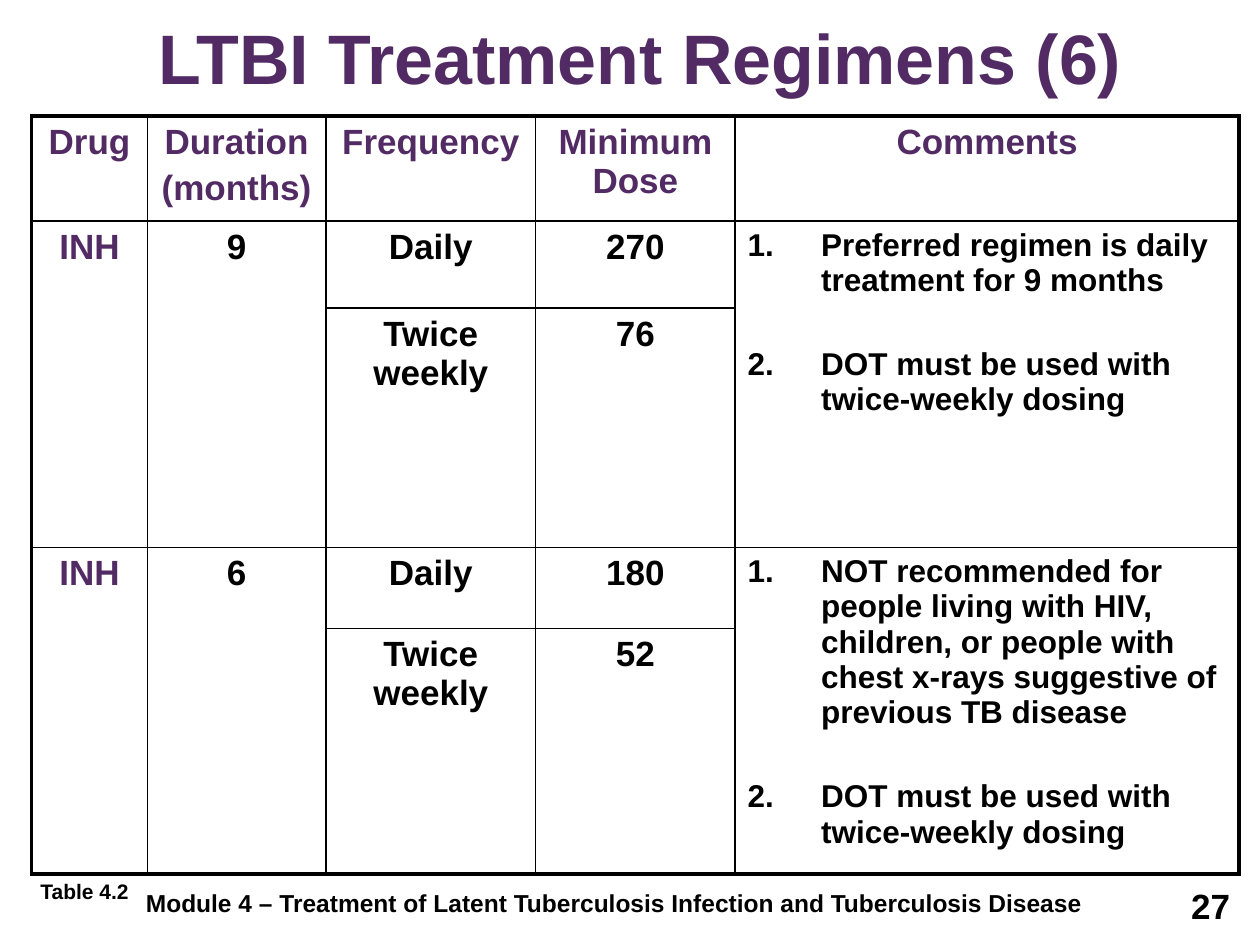
"""Build the slide with the table of LTBI treatment regimens."""
from dataclasses import dataclass

from lxml import etree
from pptx import Presentation
from pptx.dml.color import RGBColor
from pptx.enum.text import MSO_ANCHOR, PP_ALIGN
from pptx.oxml.ns import qn
from pptx.util import Cm, Pt

LEFT, CENTER, RIGHT = PP_ALIGN.LEFT, PP_ALIGN.CENTER, PP_ALIGN.RIGHT
TOP, BOTTOM = MSO_ANCHOR.TOP, MSO_ANCHOR.BOTTOM


@dataclass(frozen=True)
class Theme:
    font: str = "Arial"
    accent: RGBColor = RGBColor(0x53, 0x2B, 0x64)
    ink: RGBColor = RGBColor(0, 0, 0)
    title: int = 40
    cell: int = 20
    comment: int = 18
    footer: int = 14
    label: int = 12
    frame: float = 2.25
    rule: float = 1


THEME = Theme()


def style(para, size, color, align):
    para.alignment = align
    for span in para.runs:
        span.font.name = THEME.font
        span.font.size = Pt(size)
        span.font.bold = True
        span.font.color.rgb = color


def add_border(cell, side, width):
    line = etree.SubElement(cell._tc.get_or_add_tcPr(), qn(f"a:ln{side}"), w=str(Pt(width)))
    fill = etree.SubElement(line, qn("a:solidFill"))
    etree.SubElement(fill, qn("a:srgbClr"), val=str(THEME.ink))


deck = Presentation()
deck.slide_width, deck.slide_height = Cm(25.4), Cm(19.05)
page = deck.slides.add_slide(deck.slide_layouts[6])

texts = [
    ("Module 4 – Treatment of Latent Tuberculosis Infection and Tuberculosis Disease",
     (0, 17.78, 24.77, 0.69), THEME.footer, THEME.ink, CENTER, TOP),
    ("27", (19.13, 17.7, 5.92, 1.32), THEME.cell, THEME.ink, RIGHT, TOP),
    ("LTBI Treatment Regimens (6)", (0.84, 0.2, 24.13, 1.91),
     THEME.title, THEME.accent, CENTER, BOTTOM),
    ("Table 4.2", (-0.2, 17.58, 3.81, 0.76), THEME.label, THEME.ink, CENTER, BOTTOM),
]
for text, place, size, color, align, anchor in texts:
    box = page.shapes.add_textbox(*map(Cm, place))
    frame = box.text_frame
    frame.word_wrap = True
    frame.vertical_anchor = anchor
    frame.text = text
    style(frame.paragraphs[0], size, color, align)

DOT = "DOT must be used with twice-weekly dosing"
rows = [
    ["Drug", "Duration\n(months)", "Frequency", "Minimum Dose", "Comments"],
    ["INH", "9", "Daily", "270", f"Preferred regimen is daily treatment for 9 months\n{DOT}"],
    ["", "", "Twice weekly", "76", ""],
    ["INH", "6", "Daily", "180",
     "NOT recommended for people living with HIV, children, or people with "
     f"chest x-rays suggestive of previous TB disease\n{DOT}"],
    ["", "", "Twice weekly", "52", ""],
]
widths = [2.33, 3.6, 4.23, 4.02, 10.16]
heights = [2.12, 1.75, 4.83, 1.63, 4.88]
last_row, last_col = len(heights) - 1, len(widths) - 1

table = page.shapes.add_table(len(heights), len(widths), Cm(0.64), Cm(2.34),
                              Cm(sum(widths)), Cm(sum(heights))).table
table.first_row = table.horz_banding = False
for column, width in zip(table.columns, widths):
    column.width = Cm(width)
for row, height in zip(table.rows, heights):
    row.height = Cm(height)
for top in (1, 3):
    for col in (0, 1, last_col):
        table.cell(top, col).merge(table.cell(top + 1, col))

for r, values in enumerate(rows):
    for c, value in enumerate(values):
        cell = table.cell(r, c)
        bottom = r + cell.span_height - 1 if cell.is_merge_origin else r
        outer = {"L": c == 0, "R": c == last_col, "T": r == 0, "B": bottom == last_row}
        for side, on_frame in outer.items():
            add_border(cell, side, THEME.frame if on_frame else THEME.rule)
        cell.fill.background()
        if cell.is_spanned:
            continue
        cell.text_frame.text = value
        is_comment = r > 0 and c == last_col
        color = THEME.accent if r == 0 or c == 0 else THEME.ink
        for i, para in enumerate(cell.text_frame.paragraphs):
            para.space_before = Pt(28 if is_comment and i else 4)
            if is_comment:
                style(para, THEME.comment, color, LEFT)
                props = para._p.get_or_add_pPr()
                props.set("marL", str(Cm(1.48)))
                props.set("indent", str(-Cm(1.48)))
                etree.SubElement(props, qn("a:buFont"), typeface=THEME.font)
                etree.SubElement(props, qn("a:buAutoNum"), type="arabicPeriod")
            else:
                style(para, THEME.cell, color, CENTER)

deck.save("out.pptx")
